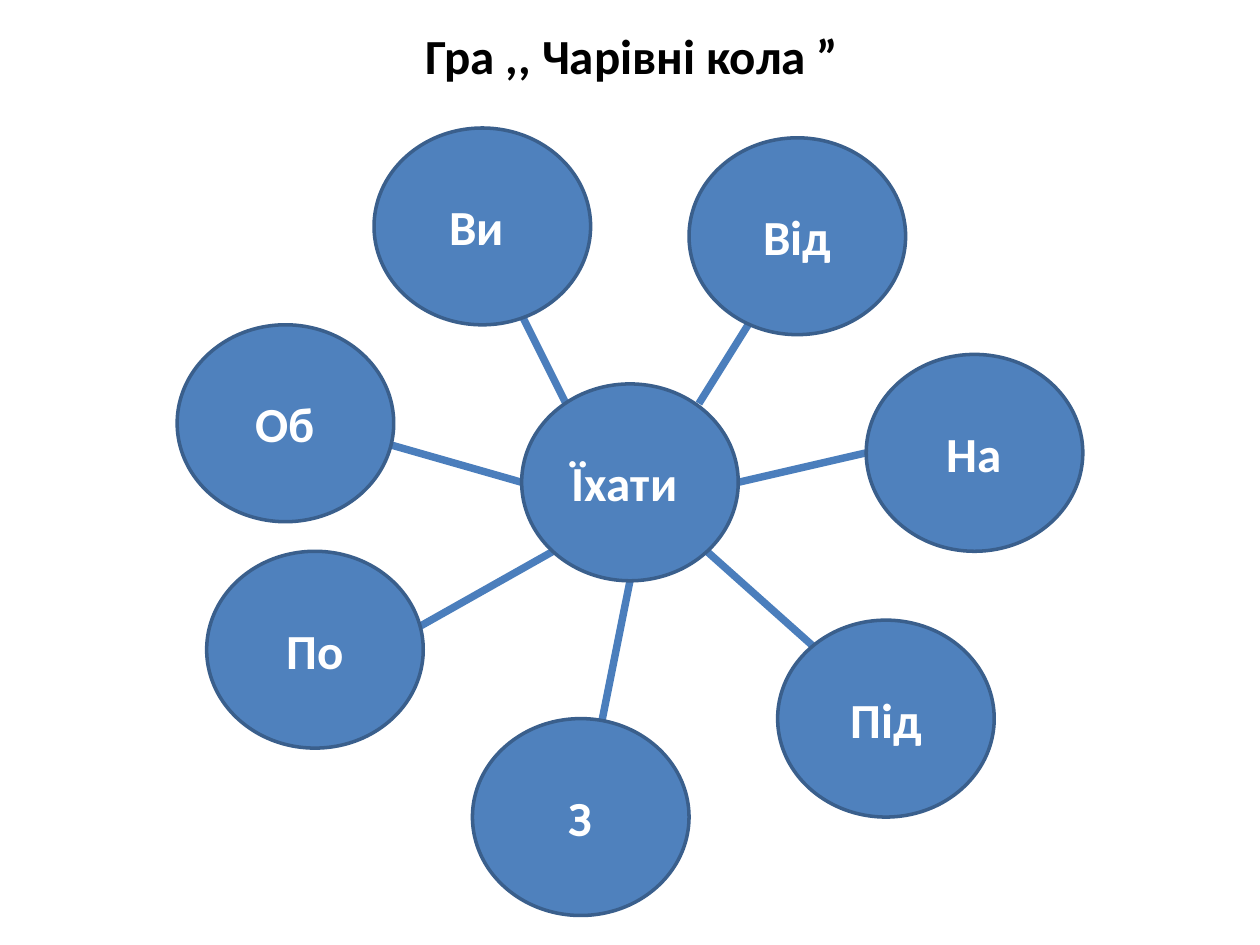
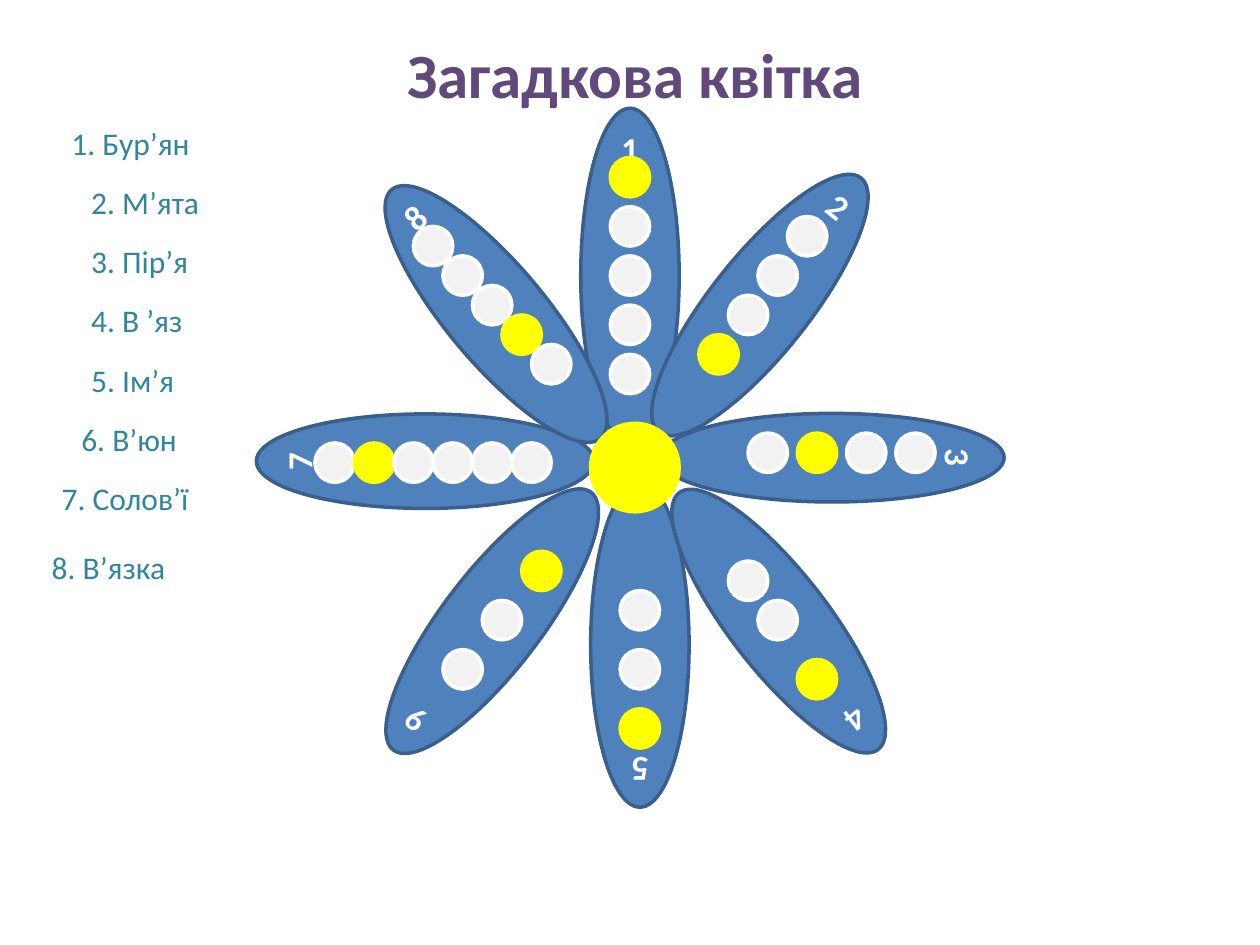
from typing import NamedTuple

from lxml.etree import SubElement
from pptx import Presentation
from pptx.dml.color import RGBColor
from pptx.enum.shapes import MSO_CONNECTOR as Connector
from pptx.enum.shapes import MSO_SHAPE as Shape
from pptx.enum.text import MSO_ANCHOR as Anchor
from pptx.enum.text import MSO_AUTO_SIZE as AutoSize
from pptx.enum.text import PP_ALIGN as Align
from pptx.oxml.ns import qn
from pptx.util import Inches, Pt

FONT = "Calibri"
BLUE = RGBColor(0x4F, 0x81, 0xBD)
DARK_BLUE = RGBColor(0x3A, 0x5F, 0x8C)
SPOKE_BLUE = RGBColor(0x4B, 0x7E, 0xBC)
WHITE = RGBColor(0xFF, 0xFF, 0xFF)
BLACK = RGBColor(0, 0, 0)
GREY = RGBColor(0xF2, 0xF2, 0xF2)
YELLOW = RGBColor(0xFF, 0xFF, 0x00)
PURPLE = RGBColor(0x60, 0x4A, 0x7B)
TEAL = RGBColor(0x31, 0x85, 0x9C)

# The slide is a grid of 128 columns and 96 rows of square cells.
WIDTH, HEIGHT = Inches(10), Inches(7.5)
CELL = WIDTH / 128


class Box(NamedTuple):
    col: float
    row: float
    cols: float
    rows: float


class Prefix(NamedTuple):
    text: str
    col: int
    row: int


class Spoke(NamedTuple):
    col1: float
    row1: float
    col2: float
    row2: float


class Petal(NamedTuple):
    number: str
    box: Box
    angle: float


class DotRow(NamedTuple):
    col: int
    row: int
    col_step: int
    row_step: int
    count: int
    yellow: int | None


class Word(NamedTuple):
    text: str
    col: int
    row: int


CIRCLE_COLS, CIRCLE_ROWS = 22, 20
DOT = 4

CIRCLES = [
    Prefix("Ви ", 38, 13),
    Prefix("Під", 79, 63),
    Prefix("З", 48, 73),
    Prefix("По", 21, 56),
    Prefix("Об", 18, 33),
    Prefix("На", 88, 36),
    Prefix("Від", 70, 14),
    Prefix("Їхати ", 53, 39),
]
SPOKES = [
    Spoke(53, 32, 58, 42),
    Spoke(76, 33, 71, 41),
    Spoke(39, 45, 53, 49),
    Spoke(42, 64, 56.2, 56),
    Spoke(64, 59, 61, 74),
    Spoke(71.8, 56, 83, 66),
    Spoke(75, 49, 88, 46),
]
PETALS = [
    Petal("1", Box(59, 11, 10, 34), 0),
    Petal("5", Box(60, 49, 10, 33), 180),
    Petal("3", Box(80, 29, 9, 35), 90),
    Petal("7", Box(38.4, 29.7, 9.6, 34.3), 270),
    Petal("4", Box(74.1, 46.6, 10, 33), 142.2),
    Petal("8", Box(45.4, 15.4, 10, 33), 320),
    Petal("9", Box(45, 46.6, 10, 33), 217.5),
    Petal("2", Box(72.2, 14.5, 10, 33), 38.5),
]
DOT_ROWS = [
    DotRow(62, 16, 0, 5, 5, 0),
    DotRow(80, 22, -3, 4, 4, 3),
    DotRow(91, 44, -5, 0, 4, 2),
    DotRow(81, 67, 0, 0, 1, 0),
    DotRow(77, 61, -3, -4, 2, None),
    DotRow(63, 72, 0, -6, 3, 0),
    DotRow(45, 66, 4, -5, 3, 2),
    DotRow(32, 45, 4, 0, 6, 1),
    DotRow(42, 23, 3, 3, 5, 3),
]
WORDS = [
    Word("1. Бур’ян", 6, 12),
    Word("2. М’ята", 8, 18),
    Word("3. Пір’я", 8, 24),
    Word("4. В ’яз", 8, 30),
    Word("5. Ім’я", 8, 36),
    Word("6. В’юн", 7, 42),
    Word("7. Солов’ї", 5, 48),
    Word("8. В’язка", 4, 55),
]


def grid(*cells: float) -> list[int]:
    return [round(n * CELL) for n in cells]


def write(tf, text: str, size: float, color: RGBColor, bold: bool, align: Align) -> None:
    p = tf.paragraphs[0]
    p.text = text
    p.alignment = align
    p.font.name, p.font.size, p.font.bold = FONT, Pt(size), bold
    p.font.color.rgb = color


def add_ellipse(slide, box: Box, fill: RGBColor = BLUE, line: RGBColor = DARK_BLUE):
    sp = slide.shapes.add_shape(Shape.OVAL, *grid(*box))
    sp.shadow.inherit = False
    sp.fill.solid()
    sp.fill.fore_color.rgb = fill
    sp.line.color.rgb = line
    sp.line.width = Pt(2)
    return sp


def add_text(slide, box: Box, text: str, size: float, color: RGBColor,
             bold: bool = False, align: Align = Align.LEFT, wrap: bool = False) -> None:
    tf = slide.shapes.add_textbox(*grid(*box)).text_frame
    tf.word_wrap = wrap
    tf.auto_size = AutoSize.SHAPE_TO_FIT_TEXT
    write(tf, text, size, color, bold, align)


def add_spoke(slide, spoke: Spoke) -> None:
    line = slide.shapes.add_connector(Connector.STRAIGHT, *grid(*spoke))
    line.line.color.rgb = SPOKE_BLUE
    line.line.width = Pt(4.25)
    SubElement(line._element.spPr, qn("a:effectLst"))


def add_circle(slide, prefix: Prefix) -> None:
    sp = add_ellipse(slide, Box(prefix.col, prefix.row, CIRCLE_COLS, CIRCLE_ROWS))
    sp.text_frame.vertical_anchor = Anchor.MIDDLE
    write(sp.text_frame, prefix.text, 28, WHITE, True, Align.CENTER)


def add_petal(slide, petal: Petal) -> None:
    """Draw a petal whose number sits near its outer tip."""
    sp = add_ellipse(slide, petal.box)
    sp.rotation = petal.angle
    tf = sp.text_frame
    tf.vertical_anchor = Anchor.BOTTOM
    tf.margin_left = tf.margin_right = tf.margin_top = 0
    tf.margin_bottom = round(0.35 * sp.height) + Inches(0.85)
    write(tf, petal.number, 20, WHITE, True, Align.CENTER)


def add_dots(slide, dots: DotRow) -> None:
    for i in range(dots.count):
        box = Box(dots.col + i * dots.col_step, dots.row + i * dots.row_step, DOT, DOT)
        fill, line = (YELLOW, YELLOW) if i == dots.yellow else (GREY, WHITE)
        add_ellipse(slide, box, fill, line)


def build_magic_circles(slide) -> None:
    for spoke in SPOKES:
        add_spoke(slide, spoke)
    for prefix in CIRCLES:
        add_circle(slide, prefix)
    add_text(slide, Box(42, 2, 53, 7.3), "Гра ,, Чарівні кола ”", 28, BLACK, bold=True)


def build_riddle_flower(slide) -> None:
    for petal in PETALS:
        add_petal(slide, petal)
    add_ellipse(slide, Box(60, 43, 9, 9), YELLOW, YELLOW)
    add_text(slide, Box(23, 3, 83, 9), "Загадкова квітка", 36, PURPLE,
             bold=True, align=Align.CENTER, wrap=True)
    for dots in DOT_ROWS:
        add_dots(slide, dots)
    for word in WORDS:
        add_text(slide, Box(word.col, word.row, 2.5 + 1.6 * len(word.text), 5.2),
                 word.text, 18, TEAL)


def main() -> None:
    prs = Presentation()
    prs.slide_width, prs.slide_height = WIDTH, HEIGHT
    for build in (build_magic_circles, build_riddle_flower):
        build(prs.slides.add_slide(prs.slide_layouts[6]))
    prs.save("out.pptx")


if __name__ == "__main__":
    main()
